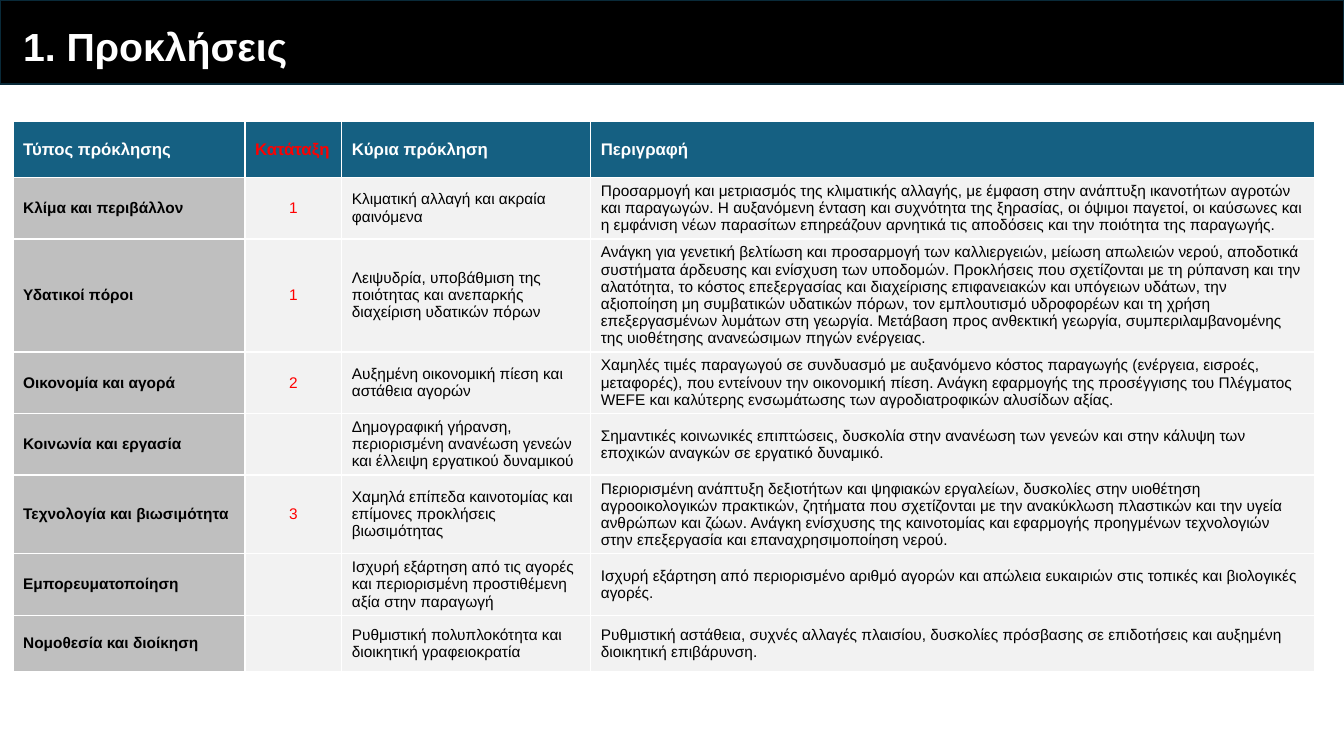
"""Build the slide on challenges, a title bar above a ranked table."""
from pptx import Presentation
from pptx.dml.color import RGBColor
from pptx.enum.shapes import MSO_SHAPE
from pptx.enum.text import MSO_ANCHOR, MSO_AUTO_SIZE, PP_ALIGN
from pptx.util import Inches, Pt

INK = {
    "black": "000000",
    "white": "FFFFFF",
    "edge": "092A39",
    "head": "156082",
    "side": "BFBFBF",
    "pale": "F2F2F2",
    "red": "FF0000",
}
COLS = [2.3, 0.96, 2.47, 7.18]
ROW = 0.56
HEAD = ["Τύπος πρόκλησης", "Κατάταξη", "Κύρια πρόκληση", "Περιγραφή"]
BODY = [
    ["Κλίμα και περιβάλλον", "1", "Κλιματική αλλαγή και ακραία φαινόμενα",
     "Προσαρμογή και μετριασμός της κλιματικής αλλαγής, με έμφαση στην "
     "ανάπτυξη ικανοτήτων αγροτών και παραγωγών. Η αυξανόμενη ένταση και "
     "συχνότητα της ξηρασίας, οι όψιμοι παγετοί, οι καύσωνες και η εμφάνιση "
     "νέων παρασίτων επηρεάζουν αρνητικά τις αποδόσεις και την ποιότητα της "
     "παραγωγής."],
    ["Υδατικοί πόροι", "1",
     "Λειψυδρία, υποβάθμιση της ποιότητας και ανεπαρκής διαχείριση υδατικών "
     "πόρων",
     "Ανάγκη για γενετική βελτίωση και προσαρμογή των καλλιεργειών, μείωση "
     "απωλειών νερού, αποδοτικά συστήματα άρδευσης και ενίσχυση των υποδομών. "
     "Προκλήσεις που σχετίζονται με τη ρύπανση και την αλατότητα, το κόστος "
     "επεξεργασίας και διαχείρισης επιφανειακών και υπόγειων υδάτων, την "
     "αξιοποίηση μη συμβατικών υδατικών πόρων, τον εμπλουτισμό υδροφορέων και "
     "τη χρήση επεξεργασμένων λυμάτων στη γεωργία. Μετάβαση προς ανθεκτική "
     "γεωργία, συμπεριλαμβανομένης της υιοθέτησης ανανεώσιμων πηγών "
     "ενέργειας."],
    ["Οικονομία και αγορά", "2",
     "Αυξημένη οικονομική πίεση και αστάθεια αγορών",
     "Χαμηλές τιμές παραγωγού σε συνδυασμό με αυξανόμενο κόστος παραγωγής "
     "(ενέργεια, εισροές, μεταφορές), που εντείνουν την οικονομική πίεση. "
     "Ανάγκη εφαρμογής της προσέγγισης του Πλέγματος WEFE και καλύτερης "
     "ενσωμάτωσης των αγροδιατροφικών αλυσίδων αξίας."],
    ["Κοινωνία και εργασία", "",
     "Δημογραφική γήρανση, περιορισμένη ανανέωση γενεών και έλλειψη "
     "εργατικού δυναμικού",
     "Σημαντικές κοινωνικές επιπτώσεις, δυσκολία στην ανανέωση των γενεών "
     "και στην κάλυψη των εποχικών αναγκών σε εργατικό δυναμικό."],
    ["Τεχνολογία και βιωσιμότητα", "3",
     "Χαμηλά επίπεδα καινοτομίας και επίμονες προκλήσεις βιωσιμότητας",
     "Περιορισμένη ανάπτυξη δεξιοτήτων και ψηφιακών εργαλείων, δυσκολίες "
     "στην υιοθέτηση αγροοικολογικών πρακτικών, ζητήματα που σχετίζονται με "
     "την ανακύκλωση πλαστικών και την υγεία ανθρώπων και ζώων. Ανάγκη "
     "ενίσχυσης της καινοτομίας και εφαρμογής προηγμένων τεχνολογιών στην "
     "επεξεργασία και επαναχρησιμοποίηση νερού."],
    ["Εμπορευματοποίηση", "",
     "Ισχυρή εξάρτηση από τις αγορές και περιορισμένη προστιθέμενη αξία στην "
     "παραγωγή",
     "Ισχυρή εξάρτηση από περιορισμένο αριθμό αγορών και απώλεια ευκαιριών "
     "στις τοπικές και βιολογικές αγορές."],
    ["Νομοθεσία και διοίκηση", "",
     "Ρυθμιστική πολυπλοκότητα και διοικητική γραφειοκρατία",
     "Ρυθμιστική αστάθεια, συχνές αλλαγές πλαισίου, δυσκολίες πρόσβασης σε "
     "επιδοτήσεις και αυξημένη διοικητική επιβάρυνση."],
]


def rgb(name):
    return RGBColor.from_string(INK[name])


def paint(item, name):
    item.fill.solid()
    item.fill.fore_color.rgb = rgb(name)


def write(frame, text, size=11, color="black", bold=False,
          align=PP_ALIGN.LEFT, space=1.0):
    para = frame.paragraphs[0]
    para.alignment = align
    para.line_spacing = space
    para.font.size = Pt(size)
    if text:
        run = para.add_run()
        run.text = text
        font = run.font
        font.name = "Arial"
        font.size = Pt(size)
        font.bold = bold
        font.color.rgb = rgb(color)


def add_bar(slide, wide):
    bar = slide.shapes.add_shape(MSO_SHAPE.RECTANGLE, 0, 0, wide, Inches(0.83))
    bar.shadow.inherit = False
    paint(bar, "black")
    bar.line.color.rgb = rgb("edge")
    bar.line.width = Pt(1.5)
    slide.shapes.title.element.addprevious(bar.element)


def set_title(slide, text):
    title = slide.shapes.title
    title.left, title.top = Inches(0.13), Inches(0.14)
    title.width, title.height = Inches(10.03), Inches(0.69)
    frame = title.text_frame
    frame.word_wrap = True
    frame.auto_size = MSO_AUTO_SIZE.NONE
    frame.vertical_anchor = MSO_ANCHOR.MIDDLE
    write(frame, text, size=28, color="white", bold=True, space=0.9)


def set_cell(cell, text, fill, **form):
    paint(cell, fill)
    cell.vertical_anchor = MSO_ANCHOR.MIDDLE
    write(cell.text_frame, text, **form)


def add_grid(slide):
    count = len(BODY) + 1
    table = slide.shapes.add_table(
        count, len(COLS), Inches(0.13), Inches(1.2),
        Inches(sum(COLS)), Inches(ROW * count)).table
    table.horz_banding = False
    for col, wide in zip(table.columns, COLS):
        col.width = Inches(wide)
    for row in table.rows:
        row.height = Inches(ROW)
    for c, text in enumerate(HEAD):
        set_cell(table.cell(0, c), text, "head", size=12, bold=True,
                 color="red" if c == 1 else "white")
    forms = [
        {"fill": "side", "bold": True},
        {"fill": "pale", "color": "red", "align": PP_ALIGN.CENTER},
        {"fill": "pale"},
        {"fill": "pale"},
    ]
    for r, line in enumerate(BODY, 1):
        for c, (text, form) in enumerate(zip(line, forms)):
            set_cell(table.cell(r, c), text, **form)


def main():
    deck = Presentation()
    deck.slide_width, deck.slide_height = Inches(13.33), Inches(7.5)
    slide = deck.slides.add_slide(deck.slide_layouts[5])
    add_bar(slide, deck.slide_width)
    set_title(slide, "1. Προκλήσεις")
    add_grid(slide)
    deck.save("out.pptx")


if __name__ == "__main__":
    main()
